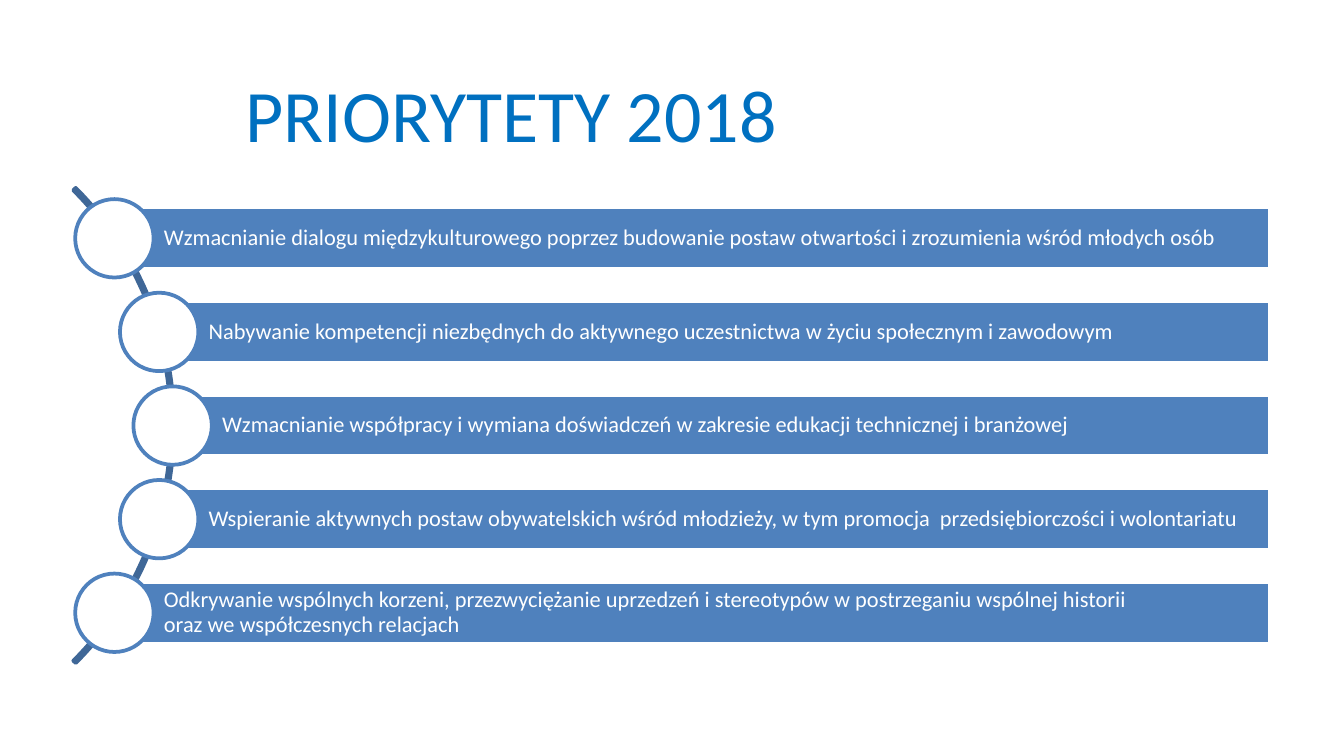
import pptx
import pptx.dml.color
import pptx.enum.shapes
import pptx.enum.text
import pptx.util

Pt = pptx.util.Pt
SHAPES = pptx.enum.shapes.MSO_SHAPE
ALIGN = pptx.enum.text.PP_ALIGN
FONT = "Calibri"
BLUE, WHITE = "4F81BD", "FFFFFF"

PRIORITIES = [
    "Wzmacnianie dialogu międzykulturowego poprzez budowanie postaw otwartości i zrozumienia wśród młodych osób",
    "Nabywanie kompetencji niezbędnych do aktywnego uczestnictwa w życiu społecznym i zawodowym",
    "Wzmacnianie współpracy i wymiana doświadczeń w zakresie edukacji technicznej i branżowej",
    "Wspieranie aktywnych postaw obywatelskich wśród młodzieży, w tym promocja  przedsiębiorczości i wolontariatu",
    "Odkrywanie wspólnych korzeni, przezwyciężanie uprzedzeń i stereotypów w postrzeganiu wspólnej historii\n"
    "oraz we współczesnych relacjach",
]
INDENTS = [0, 24, 31.2, 24, 0]  # how far the arc pushes each row to the right


def color(hex_value):
    return pptx.dml.color.RGBColor.from_string(hex_value)


def add_shape(s, kind, left, top, width, height, fill, line):
    sp = s.shapes.add_shape(kind, Pt(left), Pt(top), Pt(width), Pt(height))
    sp.shadow.inherit = False
    if fill:
        sp.fill.solid()
        sp.fill.fore_color.rgb = color(fill)
    else:
        sp.fill.background()
    sp.line.color.rgb = color(line)
    sp.line.width = Pt(2)
    return sp


def write(sp, text, size, hex_value, align):
    tf = sp.text_frame
    tf.word_wrap = True
    tf.vertical_anchor = pptx.enum.text.MSO_ANCHOR.MIDDLE
    p = tf.paragraphs[0]
    p.alignment = align
    for i, line in enumerate(text.split("\n")):
        if i:
            p.add_line_break()
        r = p.add_run()
        r.text = line
        r.font.size = Pt(size)
        r.font.name = FONT
        r.font.color.rgb = color(hex_value)
    return tf


def add_title(s, left, top, width, height):
    sp = s.shapes.add_textbox(Pt(left), Pt(top), Pt(width), Pt(height))
    write(sp, "PRIORYTETY 2018", 39.6, "0070C0", ALIGN.RIGHT)


def add_priority_list(s, left, top, width, height):
    step, bar_height, circle = 50.15, 33, 42
    middle = top + height / 2

    # Arc behind the rows: a quarter of a large ring
    ring = 360
    arc = add_shape(s, SHAPES.BLOCK_ARC, left + 32 - ring, middle - ring / 2,
                    ring, ring, None, "3F6797")
    for i, value in enumerate((189, 27, 0.005)):
        arc.adjustments[i] = value

    # Rows: a bar with its text, and a circle centred on the bar's left end
    first = middle - step * (len(PRIORITIES) - 1) / 2
    for i, (text, indent) in enumerate(zip(PRIORITIES, INDENTS)):
        x, y = left + indent, first + i * step
        bar = add_shape(s, SHAPES.RECTANGLE, x, y - bar_height / 2,
                        width - indent, bar_height, BLUE, WHITE)
        tf = write(bar, text, 12, WHITE, ALIGN.LEFT)
        tf.margin_left = Pt(26.5)
        tf.margin_top = tf.margin_right = tf.margin_bottom = Pt(2.4)
        tf.paragraphs[0].line_spacing = 0.9
        add_shape(s, SHAPES.OVAL, x - circle / 2, y - circle / 2,
                  circle, circle, WHITE, BLUE)


def main():
    prs = pptx.Presentation()
    prs.slide_width, prs.slide_height = Pt(720), Pt(405)
    s = prs.slides.add_slide(prs.slide_layouts[6])
    add_title(s, -25.2, 32.4, 448.6, 56.2)
    add_priority_list(s, 61.3, 101, 619, 254)
    prs.save("out.pptx")


if __name__ == "__main__":
    main()
